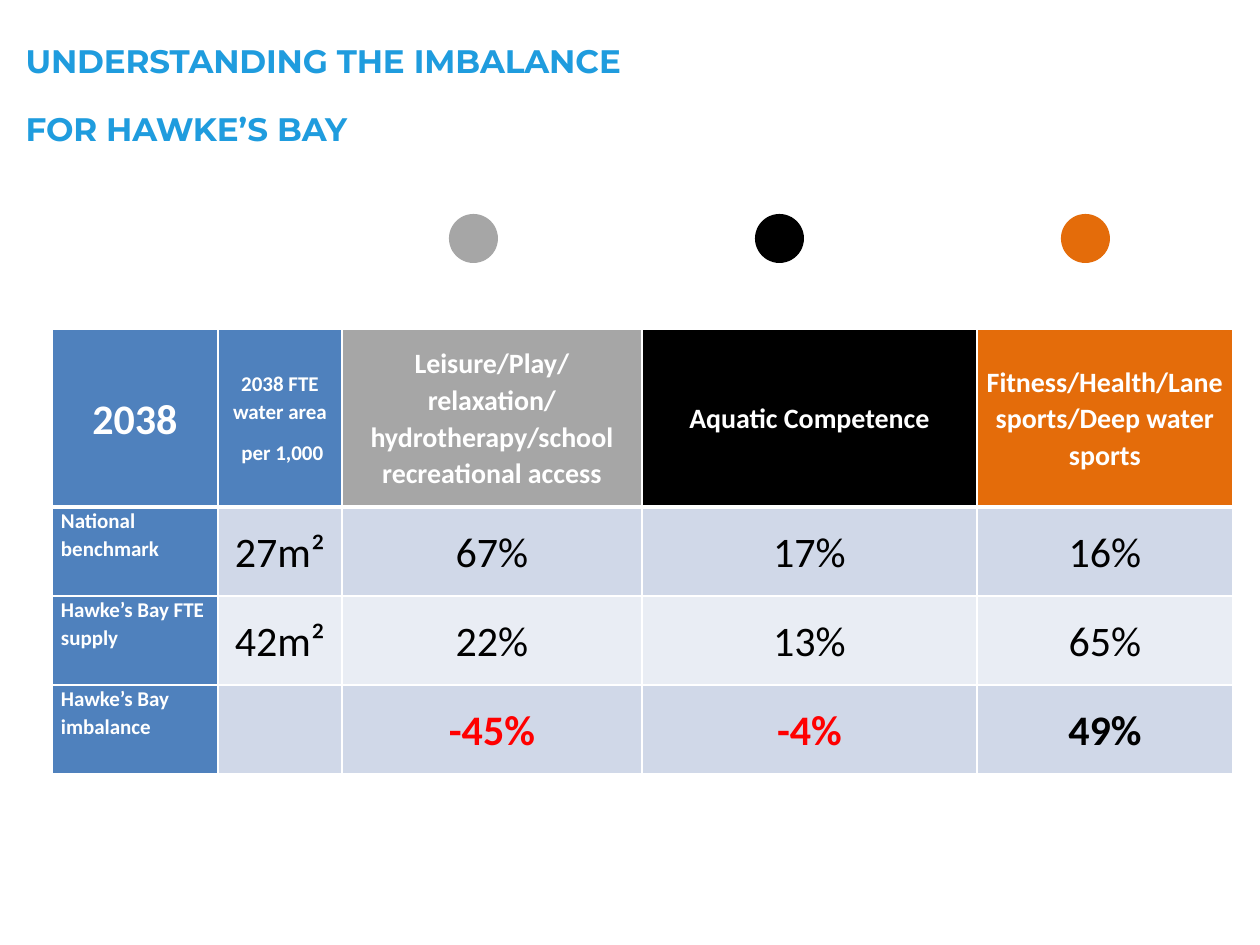
from pptx import Presentation
from pptx.dml.color import RGBColor
from pptx.enum.shapes import MSO_SHAPE
from pptx.enum.text import MSO_ANCHOR, MSO_AUTO_SIZE, PP_ALIGN
from pptx.oxml import parse_xml
from pptx.oxml.ns import nsdecls
from pptx.util import Pt

PX = 914400 // 126
BLUE, GREY, BLACK, ORANGE = "4F81BD", "A6A6A6", "000000", "E46C0A"
WHITE, RED = "FFFFFF", "FF0000"
BANDS = ["D0D8E8", "E9EDF4"]


def color(value):
    return RGBColor.from_string(value)


def add_border(cell, side, points):
    cell._tc.get_or_add_tcPr().append(parse_xml(
        f'<a:ln{side} {nsdecls("a")} w="{Pt(points)}"><a:solidFill>'
        f'<a:srgbClr val="{WHITE}"/></a:solidFill></a:ln{side}>'))


presentation = Presentation()
presentation.slide_width, presentation.slide_height = 1260 * PX, 945 * PX
slide = presentation.slides.add_slide(presentation.slide_layouts[5])

# Title, with its text set as raised (superscript) capitals
title = slide.shapes.title
title.left, title.top, title.width, title.height = 13 * PX, 44 * PX, 814 * PX, 116 * PX
title_frame = title.text_frame
title_frame.text = "UNDERSTANDING THE IMBALANCE\vFOR HAWKE’S BAY"
title_frame.auto_size = MSO_AUTO_SIZE.NONE
title_frame.vertical_anchor = MSO_ANCHOR.MIDDLE
paragraph = title_frame.paragraphs[0]
paragraph.alignment = PP_ALIGN.LEFT
for run in paragraph.runs:
    run.font.name, run.font.size, run.font.bold = "Montserrat", Pt(32), True
    run.font.color.rgb = color("1F9CDE")
    run.font._element.set("baseline", "30000")

# Category dots
for index, fill in enumerate([GREY, BLACK, ORANGE]):
    dot = slide.shapes.add_shape(
        MSO_SHAPE.OVAL, (449 + 306 * index) * PX, 214 * PX, 49 * PX, 49 * PX)
    dot.shadow.inherit = False
    dot.fill.solid()
    dot.fill.fore_color.rgb = color(fill)
    dot.line.fill.background()

# Table grid
rows = [
    ["2038", "2038 FTE water area\n per 1,000",
     "Leisure/Play/relaxation/hydrotherapy/school recreational access",
     "Aquatic Competence", "Fitness/Health/Lane sports/Deep water sports"],
    ["National benchmark", "27m²", "67%", "17%", "16%"],
    ["Hawke’s Bay FTE supply", "42m²", "22%", "13%", "65%"],
    ["Hawke’s Bay imbalance", "", "-45%", "-4%", "49%"],
]
column_widths = [166, 124, 300, 335, 256]
row_heights = [178, 89, 89, 89]
header_fills = [BLUE, BLUE, GREY, BLACK, ORANGE]
header_sizes = [24, 12, 16, 16, 16]

table = slide.shapes.add_table(
    len(rows), len(column_widths), 52 * PX, 329 * PX,
    sum(column_widths) * PX, sum(row_heights) * PX).table
for column, width in zip(table.columns, column_widths):
    column.width = width * PX
for row, height in zip(table.rows, row_heights):
    row.height = height * PX

# Table cells
for row_index, texts in enumerate(rows):
    for column_index, text in enumerate(texts):
        is_header, is_label = row_index == 0, column_index == 0
        if is_header:
            fill, size = header_fills[column_index], header_sizes[column_index]
        elif is_label:
            fill, size = BLUE, 12
        else:
            fill, size = BANDS[(row_index - 1) % 2], 24
        if is_header or is_label:
            text_color = WHITE
        else:
            text_color = RED if text.startswith("-") else BLACK

        cell = table.cell(row_index, column_index)
        cell.margin_left = cell.margin_right = 9 * PX
        cell.margin_top = cell.margin_bottom = 0
        label_below = is_label and not is_header
        cell.vertical_anchor = MSO_ANCHOR.TOP if label_below else MSO_ANCHOR.MIDDLE
        add_border(cell, "L", 1)
        add_border(cell, "R", 1)
        add_border(cell, "T", 3 if row_index == 1 else 1)
        add_border(cell, "B", 3 if is_header else 1)
        cell.fill.solid()
        cell.fill.fore_color.rgb = color(fill)

        cell.text_frame.text = text
        for paragraph in cell.text_frame.paragraphs:
            paragraph.alignment = PP_ALIGN.LEFT if label_below else PP_ALIGN.CENTER
            paragraph.line_spacing = 1.07
            paragraph.space_after = Pt(8)
            for run in paragraph.runs:
                run.font.name, run.font.size = "Calibri", Pt(size)
                run.font.bold = is_header or is_label or row_index == len(rows) - 1
                run.font.color.rgb = color(text_color)

presentation.save("out.pptx")
